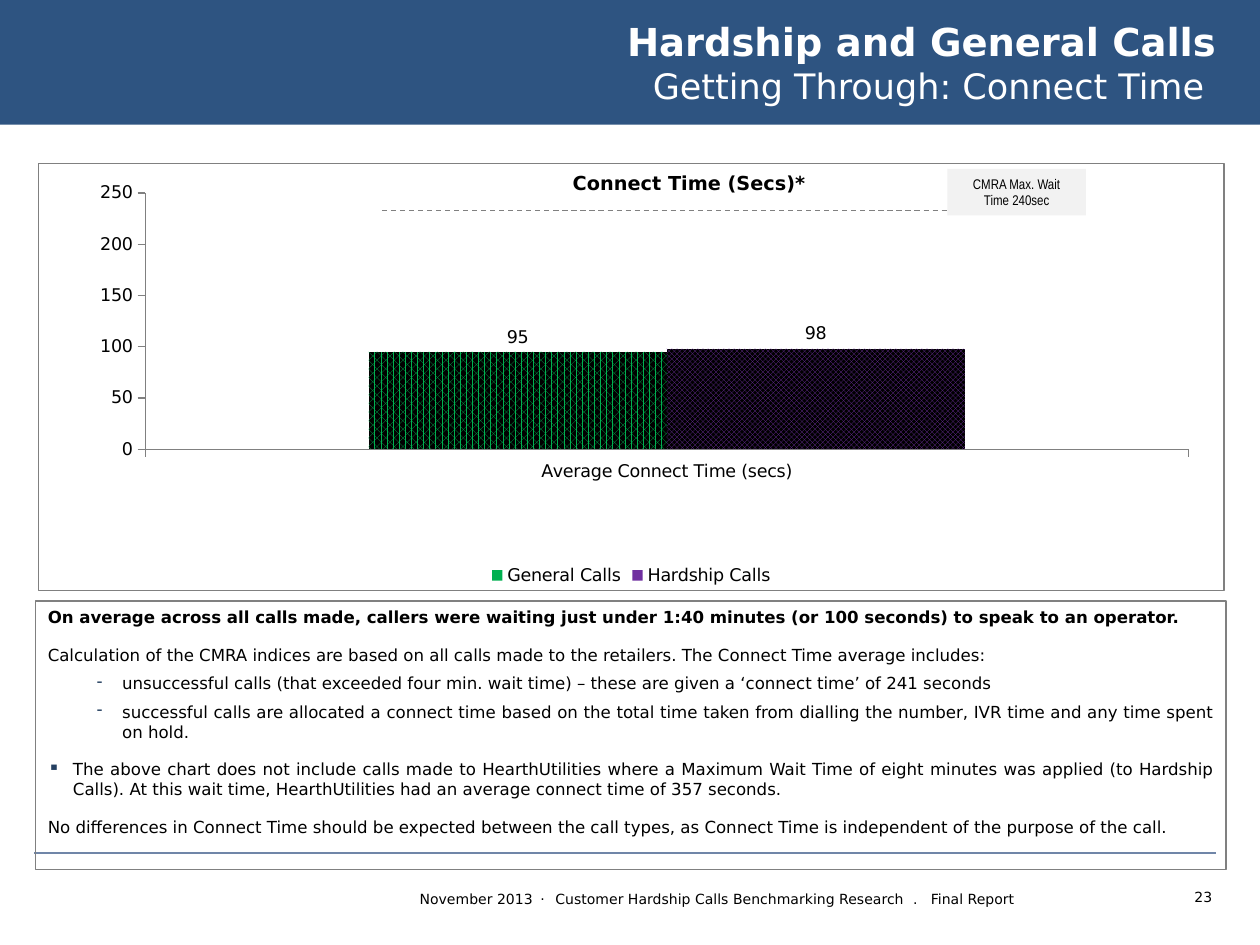
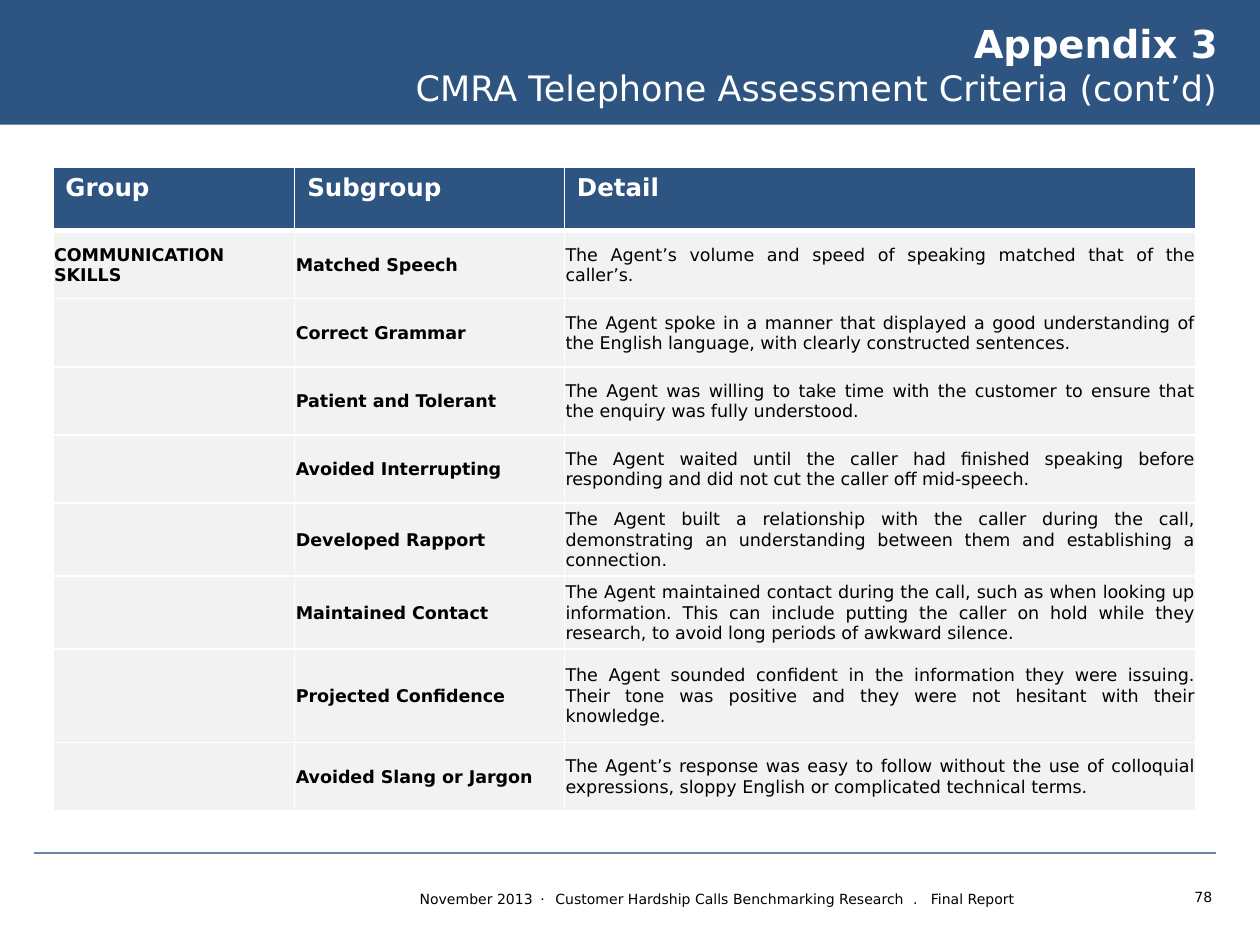
import pptx
import pptx.chart.data
import pptx.dml.color
import pptx.enum.chart
import pptx.enum.dml
import pptx.enum.shapes
import pptx.enum.text
import pptx.oxml
import pptx.oxml.ns
import pptx.util
from lxml import etree

Pt = pptx.util.Pt
qn = pptx.oxml.ns.qn
ALIGN = pptx.enum.text.PP_ALIGN
ANCHOR = pptx.enum.text.MSO_ANCHOR
DASH = pptx.enum.dml.MSO_LINE
HATCH = pptx.enum.dml.MSO_PATTERN

HEX = {
    "navy": "2E5481", "rule": "7086A8", "grey": "808080", "pale": "F2F2F2",
    "white": "FFFFFF", "black": "000000", "mark": "254061",
    "green": "00B050", "purple": "7030A0",
}
FONT = "DejaVu Sans"
PAD = (7.2, 3.6, 7.2, 3.6)


def shade(name):
    return pptx.dml.color.RGBColor.from_string(HEX[name])


def node(parent, tag, **attrs):
    return etree.SubElement(parent, qn(tag), **attrs)


class Deck:
    def __init__(self):
        self.file = pptx.Presentation()
        self.file.slide_width, self.file.slide_height = Pt(720), Pt(540)
        self.slide = None

    def page(self, number, head, sub, place, pad=PAD, anchor=ANCHOR.TOP):
        self.slide = self.file.slides.add_slide(self.file.slide_layouts[6])
        self.box((0, -0.7, 720, 72), fill="navy")
        self.para(self.label((660.2, 504, 39.6, 17.3)), [number], 8, ALIGN.RIGHT)
        foot = self.para(self.label((201.6, 505.4, 416.2, 17.3)), [
            "November 2013", " · ", "Customer Hardship Calls Benchmarking Research",
            " . ", "Final Report"], 8, ALIGN.CENTER)
        for spot, gap in ((1, "170"), (3, "250")):
            foot.runs[spot].font._element.set("spc", gap)
        self.line((19.4, 487.4), (694.8, 487.4), "rule")
        frame = self.label(place, pad, anchor)
        title = self.para(frame, [head], 22, ALIGN.RIGHT, "white", True)
        title.add_line_break()
        self.run(title, sub, 20, "white")

    def frame(self, frame, pad, anchor):
        frame.word_wrap = True
        frame.vertical_anchor = anchor
        (frame.margin_left, frame.margin_top,
         frame.margin_right, frame.margin_bottom) = map(Pt, pad)
        return frame

    def label(self, place, pad=PAD, anchor=ANCHOR.TOP):
        shape = self.slide.shapes.add_textbox(*map(Pt, place))
        return self.frame(shape.text_frame, pad, anchor)

    def box(self, place, fill=None, line=None):
        shape = self.slide.shapes.add_shape(
            pptx.enum.shapes.MSO_SHAPE.RECTANGLE, *map(Pt, place))
        shape.shadow.inherit = False
        if fill:
            shape.fill.solid()
            shape.fill.fore_color.rgb = shade(fill)
        else:
            shape.fill.background()
        if line:
            shape.line.color.rgb = shade(line)
            shape.line.width = Pt(0.75)
        else:
            shape.line.fill.background()
        return self.frame(shape.text_frame, PAD, ANCHOR.TOP)

    def line(self, start, end, color, dash=None):
        link = self.slide.shapes.add_connector(
            pptx.enum.shapes.MSO_CONNECTOR.STRAIGHT, *map(Pt, start + end))
        link.line.color.rgb = shade(color)
        link.line.width = Pt(0.75)
        if dash:
            link.line.dash_style = dash
        node(link._element.spPr, "a:effectLst")

    def run(self, para, text, size, color="black", bold=False, font=FONT):
        run = para.add_run()
        run.text = text
        run.font.size, run.font.bold, run.font.name = Pt(size), bold, font
        run.font.color.rgb = shade(color)

    def para(self, frame, texts, size, align=ALIGN.LEFT, color="black",
             bold=False, font=FONT):
        para = frame.paragraphs[0]
        if para.runs:
            para = frame.add_paragraph()
        para.alignment = align
        for text in texts:
            self.run(para, text, size, color, bold, font)
        return para

    def bullet(self, para, sign, left, level):
        para.level = level
        props = para._p.get_or_add_pPr()
        props.set("marL", str(Pt(left)))
        props.set("indent", str(Pt(-14.4)))
        node(node(props, "a:buClr"), "a:srgbClr", val=HEX["mark"])
        node(props, "a:buChar", char=sign)

    def cell(self, cell, fill, text, size, color, bold, align, pad, anchor, base):
        cell.fill.solid()
        cell.fill.fore_color.rgb = shade(fill)
        (cell.margin_left, cell.margin_top,
         cell.margin_right, cell.margin_bottom) = map(Pt, pad)
        cell.vertical_anchor = anchor
        if text:
            self.para(cell.text_frame, [text], size, align, color, bold)
        props = cell._tc.get_or_add_tcPr()
        for spot, (side, width) in enumerate(
                (("L", 1), ("R", 1), ("T", base[0]), ("B", base[1]))):
            edge = node(props, "a:ln" + side, w=str(Pt(width)))
            node(node(edge, "a:solidFill"), "a:srgbClr", val=HEX["white"])
            props.insert(spot, edge)

    def table(self, place, widths, heights, rows):
        grid = self.slide.shapes.add_table(
            len(rows), len(widths), *map(Pt, place), sum(map(Pt, heights))).table
        grid.horz_banding = False
        for col, width in zip(grid.columns, widths):
            col.width = Pt(width)
        for y, (height, texts) in enumerate(zip(heights, rows)):
            grid.rows[y].height = Pt(height)
            for x, text in enumerate(texts):
                cell = grid.cell(y, x)
                if y == 0:
                    self.cell(cell, "navy", text, 14, "white", True, ALIGN.LEFT,
                              PAD, ANCHOR.TOP, (1, 3))
                else:
                    self.cell(cell, "pale", text, 10, "black", x < 2, ALIGN.JUSTIFY,
                              (0.7, 0.7, 0.7, 0), ANCHOR.MIDDLE, (3 if y == 1 else 1, 1))

    def chart(self, place, group, bars, area):
        data = pptx.chart.data.CategoryChartData(number_format="0")
        data.categories = [group]
        for name, value, _, _ in bars:
            data.add_series(name, [value])
        chart = self.slide.shapes.add_chart(
            pptx.enum.chart.XL_CHART_TYPE.COLUMN_CLUSTERED, *map(Pt, place), data).chart
        chart.has_title = False
        chart.font.size, chart.font.name = Pt(10), FONT
        chart.font.color.rgb = shade("black")
        chart.has_legend = True
        chart.legend.position = pptx.enum.chart.XL_LEGEND_POSITION.BOTTOM
        chart.legend.include_in_layout = False
        axis = chart.value_axis
        axis.has_major_gridlines = False
        axis.minimum_scale, axis.maximum_scale, axis.major_unit = 0, 250, 50
        axis.tick_labels.number_format = "0"
        axis.tick_labels.number_format_is_linked = False
        for side in (axis, chart.category_axis):
            side.major_tick_mark = pptx.enum.chart.XL_TICK_MARK.OUTSIDE
            side.format.line.color.rgb = shade("grey")
            side.format.line.width = Pt(0.75)
        plot = chart.plots[0]
        plot.gap_width, plot.overlap, plot.vary_by_categories = 150, 0, False
        for series, (_, _, color, hatch) in zip(plot.series, bars):
            series.format.fill.solid()
            series.format.fill.fore_color.rgb = shade(color)
            fill = series.points[0].format.fill
            fill.patterned()
            fill.pattern = hatch
            fill.fore_color.rgb = shade(color)
            fill.back_color.rgb = shade("black")
            labels = series.data_labels
            labels.show_value = True
            labels.number_format = "0"
            labels.number_format_is_linked = False
            labels.position = pptx.enum.chart.XL_LABEL_POSITION.OUTSIDE_END
        self.layout(chart, area)

    def layout(self, chart, area):
        space = chart._chartSpace
        zone = space.find(".//" + qn("c:plotArea"))
        for old in zone.findall(qn("c:layout")):
            zone.remove(old)
        spot = node(zone, "c:layout")
        zone.insert(0, spot)
        spot = node(spot, "c:manualLayout")
        node(spot, "c:layoutTarget", val="inner")
        for key in ("xMode", "yMode"):
            node(spot, "c:" + key, val="edge")
        for key, value in zip("xywh", area):
            node(spot, "c:" + key, val=str(value))
        props = node(space, "c:spPr")
        node(props, "a:noFill")
        edge = node(props, "a:ln", w=str(Pt(0.75)))
        node(node(edge, "a:solidFill"), "a:srgbClr", val=HEX["grey"])
        space.find(qn("c:txPr")).addprevious(props)


NOTES = [
    ("", "On average across all calls made, callers were waiting just under 1:40 minutes (or 100 seconds) to speak to an operator."),
    ("", "Calculation of the CMRA indices are based on all calls made to the retailers. The Connect Time average includes:"),
    ("-", "unsuccessful calls (that exceeded four min. wait time) – these are given a ‘connect time’ of 241 seconds"),
    ("-", "successful calls are allocated a connect time based on the total time taken from dialling the number, IVR time and any time spent on hold."),
    ("▪", "The above chart does not include calls made to HearthUtilities where a Maximum Wait Time of eight minutes was applied (to Hardship Calls). At this wait time, HearthUtilities had an average connect time of 357 seconds."),
    ("", "No differences in Connect Time should be expected between the call types, as Connect Time is independent of the purpose of the call."),
]

SKILLS = [
    ("Group", "Subgroup", "Detail"),
    ("COMMUNICATION SKILLS", "Matched Speech", "The Agent’s volume and speed of speaking matched that of the caller’s."),
    ("", "Correct Grammar", "The Agent spoke in a manner that displayed a good understanding of the English language, with clearly constructed sentences."),
    ("", "Patient and Tolerant", "The Agent was willing to take time with the customer to ensure that the enquiry was fully understood."),
    ("", "Avoided Interrupting", "The Agent waited until the caller had finished speaking before responding and did not cut the caller off mid-speech."),
    ("", "Developed Rapport", "The Agent built a relationship with the caller during the call, demonstrating an understanding between them and establishing a connection."),
    ("", "Maintained Contact", "The Agent maintained contact during the call, such as when looking up information. This can include putting the caller on hold while they research, to avoid long periods of awkward silence."),
    ("", "Projected Confidence", "The Agent sounded confident in the information they were issuing. Their tone was positive and they were not hesitant with their knowledge."),
    ("", "Avoided Slang or Jargon", "The Agent’s response was easy to follow without the use of colloquial expressions, sloppy English or complicated technical terms."),
]


def waits(deck):
    deck.page("23", "Hardship and General Calls", "Getting Through: Connect Time ",
              (99.4, 0.7, 620.6, 69.8), (7.2, 3.6, 25.2, 3.6), ANCHOR.MIDDLE)
    notes = deck.box((20.2, 343.4, 680.4, 153.4), line="grey")
    for spot, (sign, text) in enumerate(NOTES):
        para = deck.para(notes, [text], 9.5, ALIGN.JUSTIFY, bold=spot == 0)
        if spot:
            para.space_before = Pt(3 if sign == "-" else 8)
        para.space_after = Pt(2)
        if sign:
            deck.bullet(para, sign, *((42.5, 1) if sign == "-" else (14.4, 0)))
    deck.chart((21.6, 92.9, 678.2, 244.8), "Average Connect Time (secs)", [
        ("General Calls", 95, "green", HATCH.PERCENT_70),
        ("Hardship Calls", 98, "purple", HATCH.TRELLIS),
    ], (0.09, 0.07, 0.88, 0.6))
    deck.para(deck.box((303.1, 94.3, 181.4, 20.2), fill="white"),
              ["Connect Time (Secs)*"], 11, ALIGN.CENTER, bold=True)
    deck.line((218.2, 120.2), (541.4, 120.2), "grey", DASH.DASH)
    deck.para(deck.box((541.4, 96.5, 79.2, 26.6), fill="pale"),
              ["CMRA Max. Wait Time 240sec"], 8, ALIGN.CENTER, font="Arial Narrow")


def skills(deck):
    deck.page("78", "Appendix 3", "CMRA Telephone Assessment Criteria (cont’d)",
              (139, 7.9, 563.8, 58.3))
    deck.table((30.2, 95.8, 653), (138.2, 154.1, 360.7),
               [36] + [38.9] * 4 + [41.8] * 2 + [53.3, 38.9], SKILLS)


def main():
    deck = Deck()
    waits(deck)
    skills(deck)
    deck.file.save("out.pptx")


if __name__ == "__main__":
    main()
